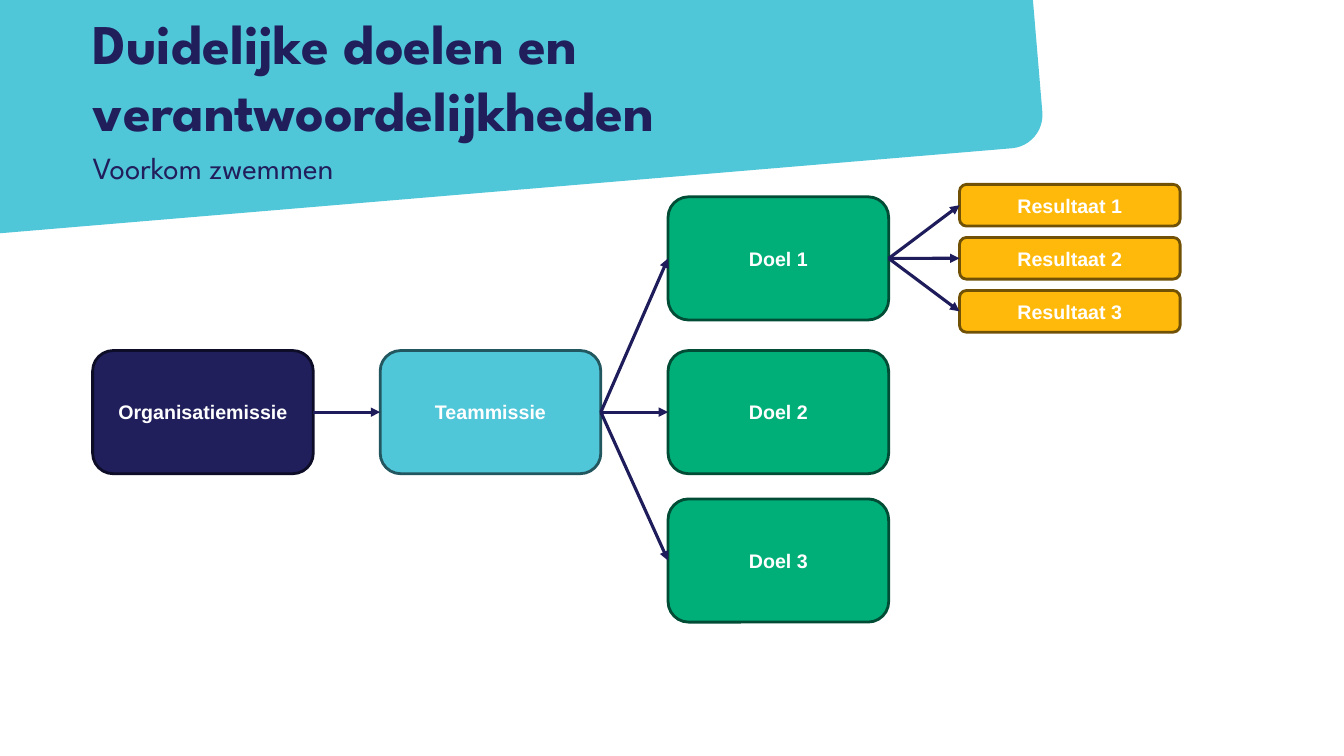
import pptx
import pptx.dml.color
import pptx.enum.shapes
import pptx.enum.text
import pptx.oxml
import pptx.oxml.ns
import pptx.util

Pt = pptx.util.Pt
SHAPE = pptx.enum.shapes.MSO_SHAPE.ROUNDED_RECTANGLE
ALIGN = pptx.enum.text.PP_ALIGN
ANCHOR = pptx.enum.text.MSO_ANCHOR
COLORS = {
    "navy": "201E5B", "navy edge": "0E0D28",
    "cyan": "50C6D9", "cyan edge": "23575F",
    "green": "00AE78", "green edge": "004C35",
    "gold": "FFB90B", "gold edge": "705105",
    "arrow": "1E1C5A", "subtitle": "211E5B", "white": "FFFFFF",
}
RGB = {name: pptx.dml.color.RGBColor.from_string(code) for name, code in COLORS.items()}

deck = pptx.Presentation()
deck.slide_width, deck.slide_height = Pt(960), Pt(540)
slide = deck.slides.add_slide(deck.slide_layouts[6])
shapes = slide.shapes


def write(shape, text, size=14, font="Arial", color="white", bold=True,
          align=ALIGN.CENTER, anchor=ANCHOR.MIDDLE, inset=None, spacing=None):
    frame = shape.text_frame
    frame.word_wrap = True
    frame.vertical_anchor = anchor
    if inset is not None:
        frame.margin_left = frame.margin_right = Pt(inset)
        frame.margin_top = frame.margin_bottom = Pt(inset)
    para = frame.paragraphs[0]
    para.alignment = align
    para.line_spacing = spacing
    run = para.add_run()
    run.text = text
    run.font.name, run.font.size, run.font.bold = font, Pt(size), bold
    run.font.color.rgb = RGB[color]


def panel(left, top, width, height, color):
    """Add a rounded rectangle with a plain fill and no outline."""
    shape = shapes.add_shape(SHAPE, Pt(left), Pt(top), Pt(width), Pt(height))
    shape.shadow.inherit = False
    shape.fill.solid()
    shape.fill.fore_color.rgb = RGB[color]
    shape.line.fill.background()
    return shape


# Heading
band = panel(-72, -66.24, 811.44, 204.48, "cyan")
band.rotation = 355.2
band.adjustments[0] = 0.117

heads = [
    ("Duidelijke doelen en verantwoordelijkheden", 5.76, 661, 99.36, 40, "navy", True, None),
    ("Voorkom zwemmen", 109.44, 828, 56.88, 22, "subtitle", False, 0.9),
]
for text, top, width, height, size, color, bold, spacing in heads:
    box = shapes.add_textbox(Pt(66.24), Pt(top), Pt(width), Pt(height))
    write(box, text, size=size, font="League Spartan", color=color, bold=bold,
          align=ALIGN.LEFT, anchor=ANCHOR.TOP, inset=0, spacing=spacing)

# Boxes
WIDTH, TALL, LOW = 157.6, 88, 29.8
MID = 250.4
boxes = [
    ("Organisatiemissie", 66.2, MID, TALL, "navy"),
    ("Teammissie", 271.6, MID, TALL, "cyan"),
]
for num, top in enumerate((140.6, MID, 356.4), 1):
    boxes.append((f"Doel {num}", 477.2, top, TALL, "green"))
for num in range(1, 4):
    boxes.append((f"Resultaat {num}", 685.4, 131.7 + 37.9 * (num - 1), LOW, "gold"))

nodes = {}
for text, left, top, height, color in boxes:
    node = panel(left, top, WIDTH, height, color)
    node.line.color.rgb = RGB[color + " edge"]
    node.line.width = Pt(2)
    write(node, text)
    nodes[text] = node

# Arrows from right side to left side
RIGHT, LEFT = 3, 1
links = [("Organisatiemissie", "Teammissie")]
links += [("Teammissie", f"Doel {num}") for num in range(1, 4)]
links += [("Doel 1", f"Resultaat {num}") for num in range(1, 4)]
for start, end in links:
    arrow = shapes.add_connector(pptx.enum.shapes.MSO_CONNECTOR.STRAIGHT, 0, 0, 0, 0)
    arrow.begin_connect(nodes[start], RIGHT)
    arrow.end_connect(nodes[end], LEFT)
    arrow.line.color.rgb = RGB["arrow"]
    arrow.line.width = Pt(2.25)
    tip = pptx.oxml.parse_xml(
        f'<a:tailEnd {pptx.oxml.ns.nsdecls("a")} type="triangle"/>')
    arrow.line._get_or_add_ln().append(tip)
    flat = pptx.oxml.parse_xml(f'<a:effectLst {pptx.oxml.ns.nsdecls("a")}/>')
    arrow._element.spPr.append(flat)

deck.save("out.pptx")
